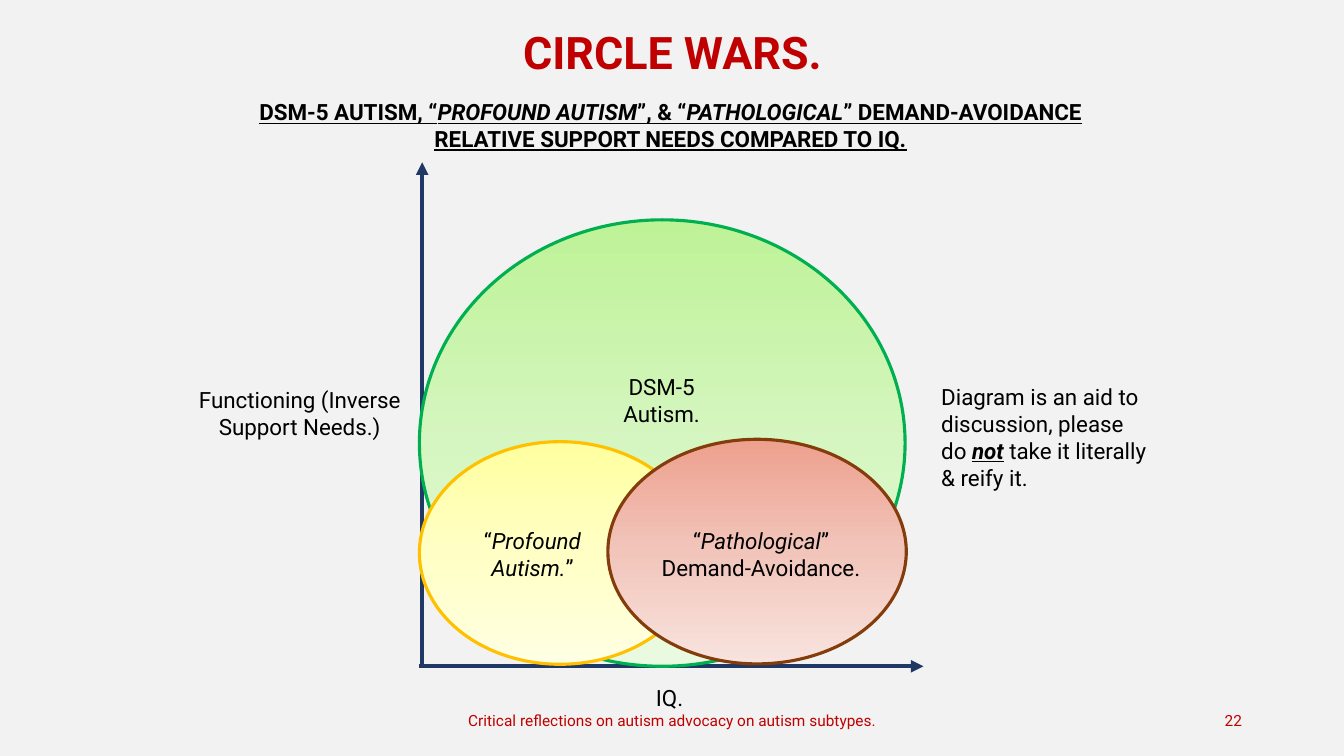
"""Build the Circle Wars slide: three ellipses on functioning and IQ axes."""
from copy import deepcopy

from lxml import etree
from pptx import Presentation
from pptx.dml.color import RGBColor
from pptx.enum.shapes import MSO_CONNECTOR, MSO_SHAPE
from pptx.enum.text import MSO_ANCHOR, PP_ALIGN
from pptx.oxml.ns import qn
from pptx.util import Cm, Pt

STRAIGHT = MSO_CONNECTOR.STRAIGHT
ELLIPSE = MSO_SHAPE.OVAL
TOP, MIDDLE = MSO_ANCHOR.TOP, MSO_ANCHOR.MIDDLE
LEFT, CENTER, RIGHT = PP_ALIGN.LEFT, PP_ALIGN.CENTER, PP_ALIGN.RIGHT

BACKGROUND = RGBColor(0xF2, 0xF2, 0xF2)
BLACK = RGBColor(0, 0, 0)
RED = RGBColor(0xC0, 0, 0)
NAVY = RGBColor(0x20, 0x38, 0x64)
GREEN = RGBColor(0, 0xB0, 0x50)
AMBER = RGBColor(0xFF, 0xC0, 0)
BROWN = RGBColor(0x84, 0x3C, 0x0B)
GREENS = [RGBColor(0xBE, 0xF2, 0x97), RGBColor(0xD5, 0xF6, 0xC0), RGBColor(0xEA, 0xFA, 0xE0)]
YELLOWS = [RGBColor(0xFF, 0xFF, 0xA0), RGBColor(0xFF, 0xFF, 0xC5), RGBColor(0xFF, 0xFF, 0xE3)]
PINKS = [RGBColor(0xED, 0xA0, 0x8E), RGBColor(0xF2, 0xC5, 0xBB), RGBColor(0xF8, 0xE3, 0xDE)]

FONT = "Roboto"
AXIS_BASE = 16.79
AXES = [
    (10.64, AXIS_BASE, 10.64, 4.09),
    (10.57, AXIS_BASE, 23.27, AXIS_BASE),
]
CIRCLES = [
    ((10.57, 5.54, 12.24, 11.25), GREENS, GREEN),
    ((10.57, 11.13, 7.09, 5.61), YELLOWS, AMBER),
    ((15.32, 11.07, 7.52, 5.66), PINKS, BROWN),
]
FOOTER = dict(size=11, color=RED, anchor=MIDDLE)
HEADINGS = [
    ((11.23, 17.65, 11.43, 1.02),
     [("Critical reflections on autism advocacy on autism subtypes.", "")], FOOTER),
    ((23.93, 17.65, 7.62, 1.02), [("22", "")], dict(FOOTER, align=RIGHT)),
    ((1.75, 0.51, 30.4, 1.63), [("CIRCLE WARS.", "b")], dict(size=32, color=RED)),
    ((6.22, 2.36, 21.36, 1.63),
     [("DSM-5 AUTISM, “", "bu"), ("PROFOUND AUTISM", "biu"), ("”, & “", "bu"),
      ("PATHOLOGICAL", "biu"),
      ("” DEMAND-AVOIDANCE RELATIVE SUPPORT NEEDS COMPARED TO IQ.", "bu")], {}),
]
LABELS = [
    ((14.6, 9.27, 4.15, 1.63), [("DSM-5 Autism.", "")], {}),
    ((11.86, 13.16, 3.12, 1.63),
     [("“", ""), ("Profound Autism.", "i"), ("”", "")], {}),
    ((16.31, 13.16, 5.74, 1.63),
     [("“", ""), ("Pathological", "i"), ("” Demand-Avoidance.", "")], {}),
    ((16.28, 17.12, 1.27, 0.94), [("IQ.", "")], dict(align=LEFT)),
    ((4.67, 9.6, 5.77, 1.63), [("Functioning (Inverse Support Needs.)", "")], {}),
    ((23.47, 9.53, 5.74, 3),
     [("Diagram is an aid to discussion, please do ", ""), ("not", "biu"),
      (" take it literally & reify it.", "")], dict(align=LEFT)),
]


def add_text(slide, box, runs, size=16, color=BLACK, align=CENTER, anchor=TOP):
    frame = slide.shapes.add_textbox(*map(Cm, box)).text_frame
    frame.word_wrap = True
    frame.vertical_anchor = anchor
    paragraph = frame.paragraphs[0]
    paragraph.alignment = align
    for text, style in runs:
        run = paragraph.add_run()
        run.text = text
        font = run.font
        font.name, font.size, font.color.rgb = FONT, Pt(size), color
        font.bold, font.italic, font.underline = (flag in style for flag in "biu")


def add_axis(slide, ends):
    axis = slide.shapes.add_connector(STRAIGHT, *map(Cm, ends))
    axis.line.color.rgb = NAVY
    axis.line.width = Pt(3)
    etree.SubElement(axis.line._get_or_add_ln(), qn("a:tailEnd"), type="triangle")
    etree.SubElement(axis._element.spPr, qn("a:effectLst"))


def add_circle(slide, box, colors, outline):
    circle = slide.shapes.add_shape(ELLIPSE, *map(Cm, box))
    circle.shadow.inherit = False
    circle.line.color.rgb = outline
    circle.line.width = Pt(2.25)
    circle.fill.gradient()
    circle.fill.gradient_angle = 270
    stop_list = circle._element.spPr.find(".//" + qn("a:gsLst"))
    stop_list.insert(1, deepcopy(stop_list[0]))
    for index, (stop, color) in enumerate(zip(circle.fill.gradient_stops, colors)):
        stop.position = index / 2
        stop.color.rgb = color


def main():
    presentation = Presentation()
    presentation.slide_width, presentation.slide_height = Cm(33.87), Cm(19.05)
    slide = presentation.slides.add_slide(presentation.slide_layouts[6])
    slide.background.fill.solid()
    slide.background.fill.fore_color.rgb = BACKGROUND
    for box, runs, style in HEADINGS:
        add_text(slide, box, runs, **style)
    for ends in AXES:
        add_axis(slide, ends)
    for box, colors, outline in CIRCLES:
        add_circle(slide, box, colors, outline)
    for box, runs, style in LABELS:
        add_text(slide, box, runs, **style)
    presentation.save("out.pptx")


if __name__ == "__main__":
    main()
